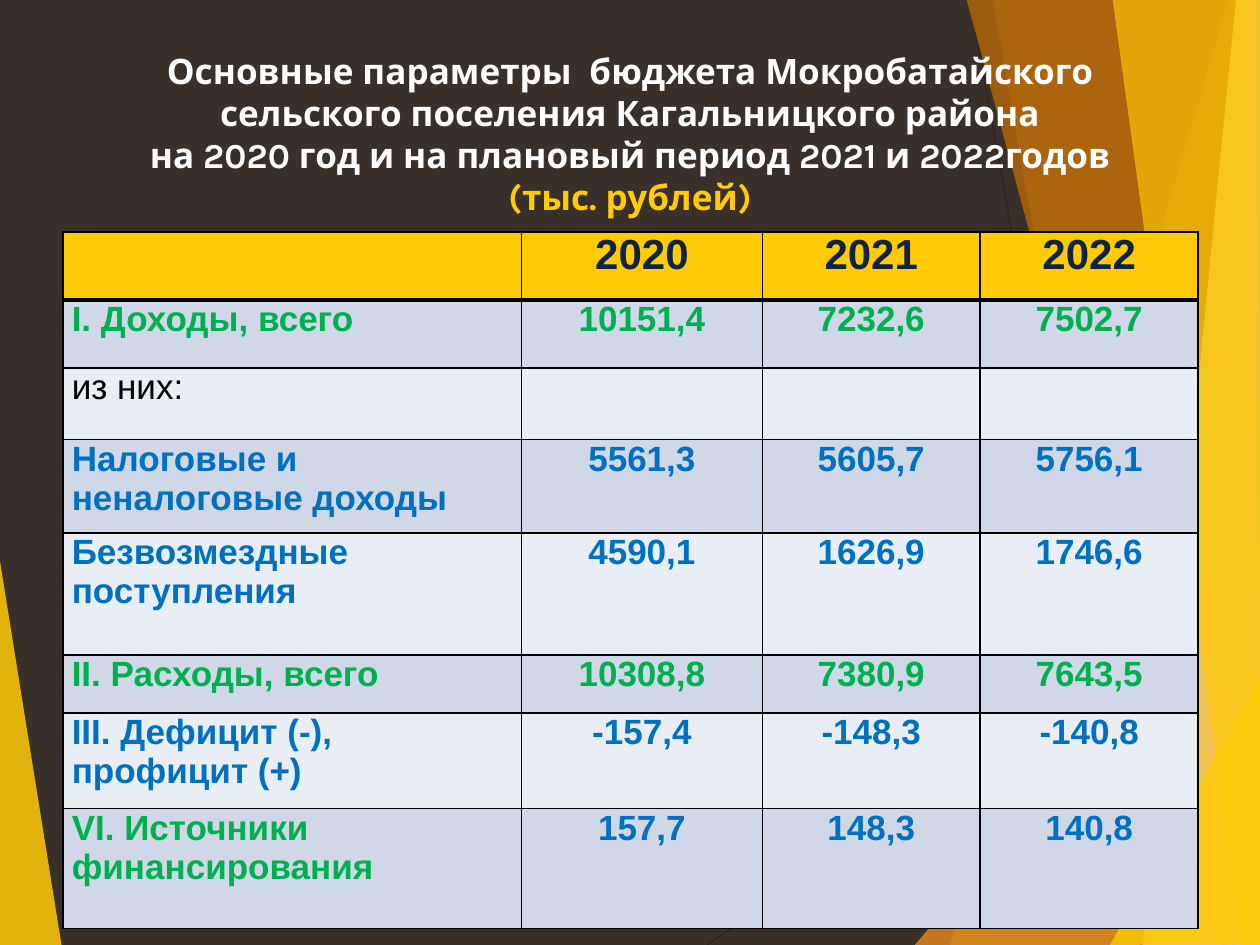
"""Build the budget parameters slide with its faceted background and table."""
from lxml import etree
from pptx import Presentation
from pptx.dml.color import RGBColor
from pptx.enum import shapes, text
from pptx.oxml import ns
from pptx.util import Inches, Pt

DARK = RGBColor(0x39, 0x30, 0x2A)
LINE = RGBColor(0x26, 0x26, 0x26)
GOLD = RGBColor(0xFF, 0xCA, 0x08)
PALE_GOLD = RGBColor(0xFF, 0xDF, 0x6B)
ORANGE = RGBColor(0xF8, 0x93, 0x1D)
BROWN = RGBColor(0xCA, 0x6F, 0x06)
WHITE = RGBColor(0xFF, 0xFF, 0xFF)
BLACK = RGBColor(0x00, 0x00, 0x00)
NAVY = RGBColor(0x0F, 0x24, 0x3E)
GREEN = RGBColor(0x00, 0xB0, 0x50)
BLUE = RGBColor(0x00, 0x70, 0xC0)
BAND_DARK = RGBColor(0xD0, 0xD8, 0xE8)
BAND_LIGHT = RGBColor(0xE9, 0xED, 0xF4)


def add_facet(slide, points, color, opacity):
    corners = [(Inches(x), Inches(y)) for x, y in points]
    builder = slide.shapes.build_freeform(*corners[0])
    builder.add_line_segments(corners[1:], close=True)
    shape = builder.convert_to_shape()
    shape.shadow.inherit = False
    shape.line.fill.background()
    shape.fill.solid()
    shape.fill.fore_color.rgb = color
    color_element = shape.fill._xPr.find(".//" + ns.qn("a:srgbClr"))
    etree.SubElement(color_element, ns.qn("a:alpha"), val=str(opacity * 1000))


def add_border(cell, side, points):
    properties = cell._tc.get_or_add_tcPr()
    border = etree.SubElement(properties, ns.qn("a:ln" + side), w=str(Pt(points)))
    fill = etree.SubElement(border, ns.qn("a:solidFill"))
    etree.SubElement(fill, ns.qn("a:srgbClr"), val=str(BLACK))


presentation = Presentation()
presentation.slide_width = Inches(10)
presentation.slide_height = Inches(7.5)
slide = presentation.slides.add_slide(presentation.slide_layouts[6])
slide.background.fill.solid()
slide.background.fill.fore_color.rgb = DARK

for ends in [(5.61, 7.5, 10.01, 4.57), (7.7, 0, 9.04, 7.5)]:
    connector = slide.shapes.add_connector(
        shapes.MSO_CONNECTOR.STRAIGHT, *[Inches(value) for value in ends])
    connector.line.color.rgb = LINE
    connector.line.width = Pt(0.75)
    etree.SubElement(connector._element.spPr, ns.qn("a:effectLst"))

facets = [
    ([(-0.01, 4.39), (0.49, 7.51), (-0.01, 7.5)], GOLD, 85),
    ([(9.75, 0), (7.54, 7.5), (10.02, 7.51), (10.01, 0.01)], GOLD, 30),
    ([(7.88, -0.01), (9.19, 7.5), (10.01, 7.5), (10.01, -0.01)], GOLD, 20),
    ([(7.26, 7.5), (10, 4.29), (10.01, 7.5)], ORANGE, 72),
    ([(7.67, -0.01), (9.7, 7.5), (10.01, 7.49), (10.01, -0.01)], BROWN, 70),
    ([(9.81, -0.01), (9.07, 7.5), (10.01, 7.5), (10, -0.01)], PALE_GOLD, 70),
    ([(8.83, -0.01), (9.86, 7.5), (10, 7.5), (9.98, -0.01)], GOLD, 65),
    ([(8.81, 7.5), (10.01, 5.35), (10.01, 7.49)], GOLD, 80),
]
for points, color, opacity in facets:
    add_facet(slide, points, color, opacity)

title = slide.shapes.add_textbox(Inches(0.5), Inches(0.32), Inches(9), Inches(1.8))
title.text_frame.word_wrap = True
title.text_frame.margin_top = Inches(0.07)
paragraph = title.text_frame.paragraphs[0]
paragraph.alignment = text.PP_ALIGN.CENTER
paragraph.font.name = "Karla"
paragraph.font.size = Pt(20)
paragraph.font.bold = True
title_lines = [
    ("Основные параметры  бюджета Мокробатайского "
     "сельского поселения Кагальницкого района", WHITE),
    ("на 2020 год и на плановый период 2021 и 2022годов", WHITE),
    ("(тыс. рублей)", GOLD),
]
for index, (words, color) in enumerate(title_lines):
    if index:
        paragraph.add_line_break()
    run = paragraph.add_run()
    run.text = words
    run.font.color.rgb = color

rows = [
    (0.54, NAVY, NAVY, ["", "2020", "2021", "2022"]),
    (0.54, GREEN, GREEN, ["I. Доходы, всего", "10151,4", "7232,6", "7502,7"]),
    (0.57, BLACK, BLACK, ["из них:", "", "", ""]),
    (0.74, BLUE, BLUE, ["Налоговые и неналоговые доходы", "5561,3", "5605,7", "5756,1"]),
    (0.97, BLUE, BLUE, ["Безвозмездные поступления", "4590,1", "1626,9", "1746,6"]),
    (0.46, GREEN, GREEN, ["II. Расходы, всего", "10308,8", "7380,9", "7643,5"]),
    (0.76, BLUE, BLUE, ["III. Дефицит (-), профицит (+)", "-157,4", "-148,3", "-140,8"]),
    (0.95, GREEN, BLUE, ["VI. Источники финансирования", "157,7", "148,3", "140,8"]),
]
column_widths = [3.64, 1.91, 1.73, 1.73]
table = slide.shapes.add_table(
    len(rows), len(column_widths), Inches(0.5), Inches(1.84), Inches(9), Inches(5.53)).table
table.first_row = False
table.horz_banding = False
for column, width in zip(table.columns, column_widths):
    column.width = Inches(width)

for row_index, (height, label_color, value_color, entries) in enumerate(rows):
    table.rows[row_index].height = Inches(height)
    band = BAND_DARK if row_index % 2 else BAND_LIGHT
    for column_index, entry in enumerate(entries):
        cell = table.cell(row_index, column_index)
        cell.margin_left = cell.margin_right = Inches(0.07)
        cell.margin_top = cell.margin_bottom = 0
        for side in "LRTB":
            thick = (row_index, side) in [(0, "B"), (1, "T")]
            add_border(cell, side, 3 if thick else 1)
        cell.fill.solid()
        cell.fill.fore_color.rgb = band if row_index else GOLD
        cell.text = entry
        paragraph = cell.text_frame.paragraphs[0]
        paragraph.alignment = text.PP_ALIGN.CENTER if column_index else text.PP_ALIGN.LEFT
        paragraph.font.name = "Arial"
        paragraph.font.size = Pt(20 if row_index else 24)
        paragraph.font.bold = label_color != BLACK
        paragraph.font.color.rgb = value_color if column_index else label_color

presentation.save("out.pptx")
